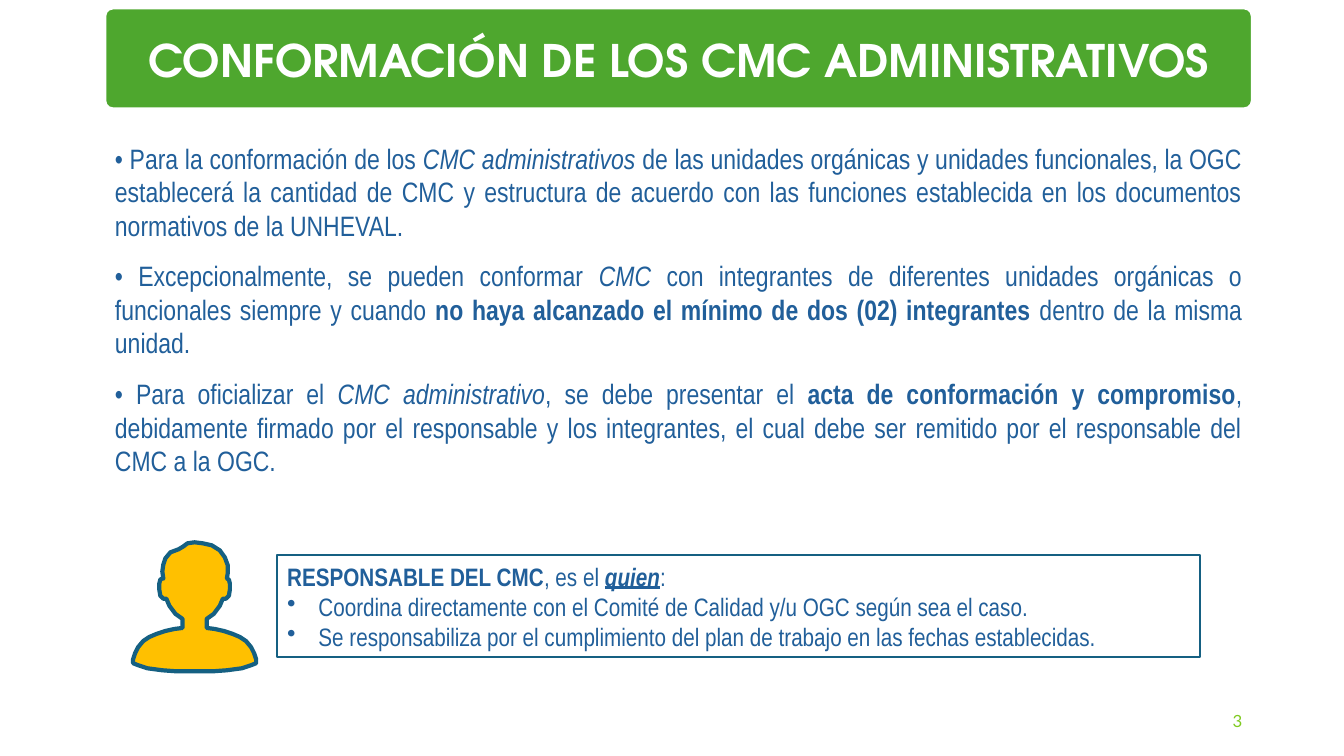
from dataclasses import dataclass

from lxml.etree import SubElement
from pptx import Presentation
from pptx.dml.color import RGBColor
from pptx.enum.shapes import MSO_SHAPE
from pptx.enum.text import MSO_ANCHOR, MSO_AUTO_SIZE, PP_ALIGN
from pptx.oxml.ns import qn
from pptx.util import Inches, Pt


@dataclass(frozen=True)
class Theme:
    green: str = "4EA72E"
    lime: str = "7FCA20"
    blue: str = "215F9A"
    teal: str = "156082"
    gold: str = "FFC000"
    white: str = "FFFFFF"
    head: str = "TeX Gyre Adventor"
    text: str = "Arial Narrow"
    note: str = "Lato"
    big: int = 32
    mid: int = 20
    small: int = 18
    tiny: int = 12


THEME = Theme()
ITAL = {"italic": True}
BOLD = {"bold": True}

BODY = [
    [("• Para la conformación de los ", {}), ("CMC administrativos ", ITAL),
     ("de las unidades orgánicas y unidades funcionales, la OGC establecerá "
      "la cantidad de CMC y estructura de acuerdo con las funciones "
      "establecida en los documentos normativos de la UNHEVAL.", {})],
    [("• Excepcionalmente, se pueden conformar ", {}), ("CMC", ITAL),
     (" con integrantes de diferentes unidades orgánicas o funcionales "
      "siempre y cuando ", {}),
     ("no haya alcanzado el mínimo de dos (02) integrantes", BOLD),
     (" dentro de la misma unidad.", {})],
    [("• Para oficializar el ", {}), ("CMC administrativo", ITAL),
     (", se debe presentar el ", {}),
     ("acta de conformación y compromiso", BOLD),
     (", debidamente firmado por el responsable y los integrantes, el cual "
      "debe ser remitido por el responsable del CMC a la OGC.", {})],
]
ROLE = [("RESPONSABLE DEL CMC", BOLD), (", es el ", {}),
        ("quien", {"bold": True, "italic": True, "underline": True}),
        (":", {})]
DUTIES = [
    "Coordina directamente con el Comité de Calidad y/u OGC según sea el caso.",
    "Se responsabiliza por el cumplimiento del plan de trabajo en las fechas "
    "establecidas.",
]

# Outline of the person: hair from left ear to right ear, then the right half
AXIS = 1.93
HAIR = [(1.62, 5.74), (1.61, 5.67), (1.62, 5.6), (1.64, 5.54), (1.69, 5.48),
        (1.77, 5.45), (1.82, 5.42), (1.86, 5.39), (1.93, 5.38), (2.01, 5.39),
        (2.1, 5.41), (2.18, 5.46), (2.23, 5.53), (2.26, 5.61), (2.26, 5.68)]
HALF = [(2.25, 5.74), (2.27, 5.75), (2.28, 5.79), (2.28, 5.85), (2.27, 5.91),
        (2.24, 5.94), (2.21, 5.94), (2.18, 6.01), (2.12, 6.09), (2.05, 6.14),
        (2.05, 6.23), (2.13, 6.24), (2.22, 6.26), (2.31, 6.29), (2.38, 6.32),
        (2.44, 6.36), (2.49, 6.42), (2.52, 6.48), (2.54, 6.54), (2.54, 6.58),
        (2.49, 6.6), (2.4, 6.63), (2.25, 6.65), (2.11, 6.66)]


def place(shape, left, top, width, height):
    shape.left, shape.top = Inches(left), Inches(top)
    shape.width, shape.height = Inches(width), Inches(height)


def paint(shape, fill, line, width):
    shape.shadow.inherit = False
    shape.fill.solid()
    shape.fill.fore_color.rgb = RGBColor.from_string(fill)
    shape.line.color.rgb = RGBColor.from_string(line)
    shape.line.width = Pt(width)


def frame(shape, anchor):
    text = shape.text_frame
    text.word_wrap = True
    text.auto_size = MSO_AUTO_SIZE.NONE
    text.vertical_anchor = anchor
    return text


def write(para, text, font=THEME.text, size=THEME.mid, color=THEME.blue,
          bold=False, italic=False, underline=False):
    run = para.add_run()
    run.text = text
    style = run.font
    style.name, style.size = font, Pt(size)
    style.color.rgb = RGBColor.from_string(color)
    style.bold, style.italic, style.underline = bold, italic, underline


def layout(para, align, after=0, indent=0, mark=None):
    para.alignment = align
    para.space_before, para.space_after = Pt(0), Pt(after)
    props = para._p.get_or_add_pPr()
    props.set("marL", str(Inches(indent)))
    props.set("indent", str(-Inches(indent)))
    if mark:
        SubElement(props, qn("a:buChar")).set("char", mark)
    else:
        SubElement(props, qn("a:buNone"))


def add_title(slide):
    band = slide.shapes.add_shape(MSO_SHAPE.ROUNDED_RECTANGLE, 0, 0, 0, 0)
    place(band, 1.04, 0.08, 11.38, 1)
    band.adjustments[0] = 0.08
    paint(band, THEME.green, THEME.white, 2)
    title = slide.shapes.title
    title._element.addprevious(band._element)  # band goes behind the title
    place(title, 0.96, 0.27, 11.55, 0.64)
    para = frame(title, MSO_ANCHOR.TOP).paragraphs[0]
    layout(para, PP_ALIGN.CENTER)
    write(para, "CONFORMACIÓN DE LOS CMC ADMINISTRATIVOS", font=THEME.head,
          size=THEME.big, color=THEME.white, bold=True)


def add_body(slide):
    body = slide.placeholders[1]
    place(body, 1.04, 1.35, 11.38, 3.94)
    text = frame(body, MSO_ANCHOR.TOP)
    for i, parts in enumerate(BODY):
        para = text.add_paragraph() if i else text.paragraphs[0]
        layout(para, PP_ALIGN.JUSTIFY, after=12)
        for words, style in parts:
            write(para, words, **style)


def add_person(slide):
    left = [(2 * AXIS - x, y) for x, y in reversed(HALF)]
    points = [(Inches(x), Inches(y)) for x, y in HAIR + HALF + left]
    pen = slide.shapes.build_freeform(*points[0])
    pen.add_line_segments(points[1:], close=True)
    paint(pen.convert_to_shape(), THEME.gold, THEME.teal, 3)


def add_role(slide):
    box = slide.shapes.add_shape(MSO_SHAPE.RECTANGLE, 0, 0, 0, 0)
    place(box, 2.75, 5.51, 9.15, 1.01)
    paint(box, THEME.white, THEME.teal, 1.5)
    text = frame(box, MSO_ANCHOR.MIDDLE)
    layout(text.paragraphs[0], PP_ALIGN.JUSTIFY)
    for words, style in ROLE:
        write(text.paragraphs[0], words, size=THEME.small, **style)
    for duty in DUTIES:
        para = text.add_paragraph()
        layout(para, PP_ALIGN.JUSTIFY, indent=0.31, mark="•")
        write(para, duty, size=THEME.small)


def add_number(slide):
    box = slide.shapes.add_textbox(0, 0, 0, 0)
    place(box, 9.42, 6.95, 3, 0.4)
    para = frame(box, MSO_ANCHOR.MIDDLE).paragraphs[0]
    layout(para, PP_ALIGN.RIGHT)
    write(para, "3", font=THEME.note, size=THEME.tiny, color=THEME.lime)


def main():
    deck = Presentation()
    deck.slide_width, deck.slide_height = Inches(13.33), Inches(7.5)
    slide = deck.slides.add_slide(deck.slide_layouts[1])
    # Heading and main list
    add_title(slide)
    add_body(slide)
    # Person in charge and duties
    add_person(slide)
    add_role(slide)
    # Page number
    add_number(slide)
    deck.save("out.pptx")


if __name__ == "__main__":
    main()
